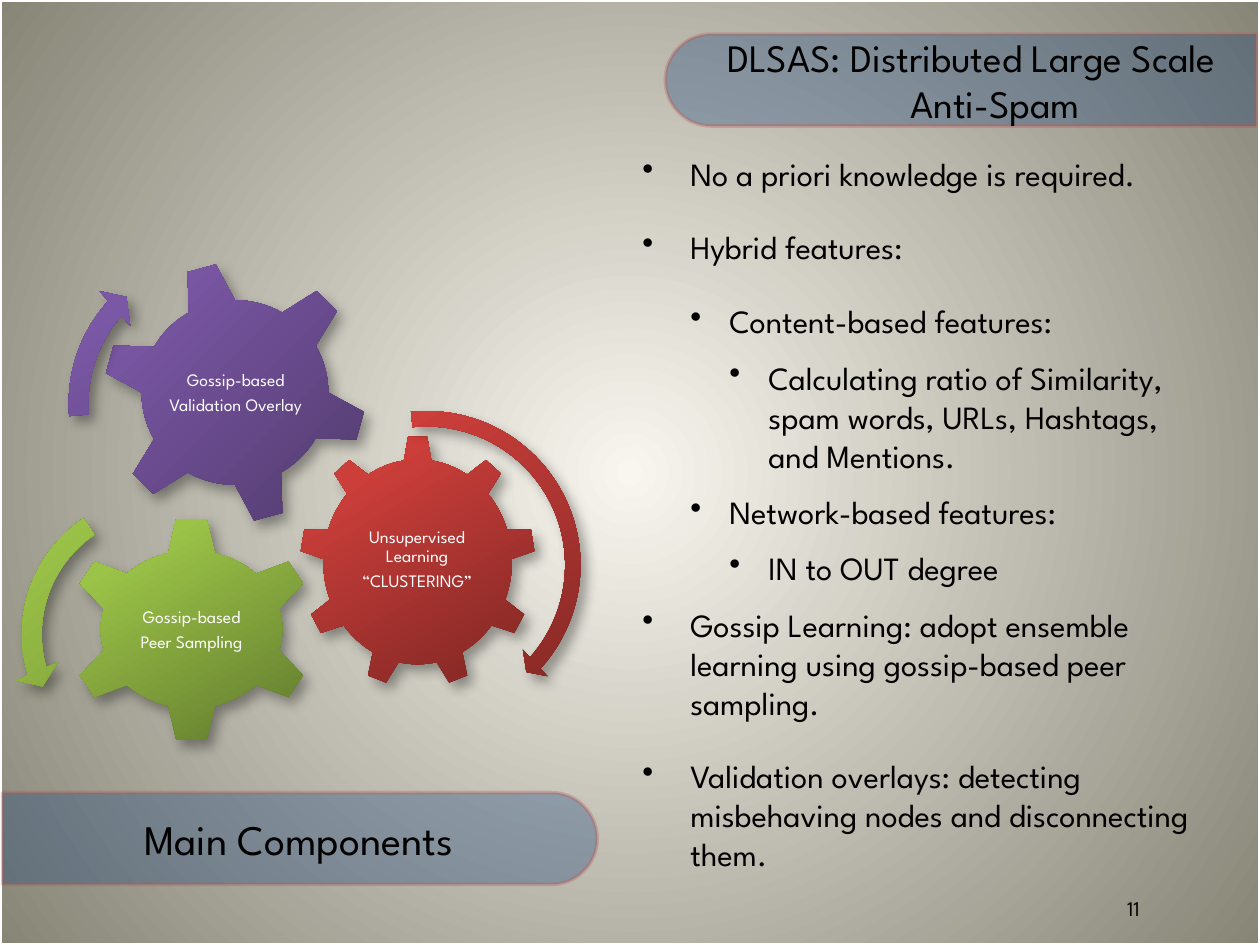
from dataclasses import dataclass
from typing import NamedTuple

from pptx import Presentation
from pptx.dml.color import RGBColor
from pptx.enum.shapes import MSO_SHAPE
from pptx.enum.text import MSO_ANCHOR, MSO_AUTO_SIZE, PP_ALIGN
from pptx.oxml import parse_xml
from pptx.oxml.ns import nsdecls, qn
from pptx.util import Emu, Inches, Pt

CENTER, LEFT = PP_ALIGN.CENTER, PP_ALIGN.LEFT
TOP, MIDDLE = MSO_ANCHOR.TOP, MSO_ANCHOR.MIDDLE
GEAR_6, GEAR_9 = MSO_SHAPE.GEAR_6, MSO_SHAPE.GEAR_9
ARROW, LEFT_ARROW = MSO_SHAPE.CIRCULAR_ARROW, MSO_SHAPE.LEFT_CIRCULAR_ARROW
BAND, RECTANGLE = MSO_SHAPE.ROUND_2_SAME_RECTANGLE, MSO_SHAPE.RECTANGLE
TITLE_ONLY = 5
COLUMNS, ROWS = 100, 75
SLIDE_WIDTH, SLIDE_HEIGHT = Inches(10), Inches(7.5)


@dataclass(frozen=True)
class Theme:
    font: str = "League Spartan"
    ink: str = "000000"
    light: str = "FFFFFF"
    band: str = "073779"
    band_line: str = "C0504D"
    band_opacity: int = 30
    background: tuple = ((0, "F8F6EE"), (100, "878576"))
    red: tuple = ((0, "7C2623"), (80, "CB3E3A"), (100, "CE3B37"))
    green: tuple = ((0, "5F772C"), (80, "9BC348"), (100, "9DC746"))
    purple: tuple = ((0, "4B3665"), (80, "7B58A6"), (100, "7C57A8"))
    title: float = 22.2
    caption: float = 24
    body: float = 18.5
    gear: float = 10
    number: float = 12


class Box(NamedTuple):
    """A place on the grid, in columns and rows."""
    left: float
    top: float
    width: float
    height: float

    def lengths(self) -> list[Emu]:
        column, row = SLIDE_WIDTH / COLUMNS, SLIDE_HEIGHT / ROWS
        return [Emu(round(share * unit)) for share, unit in zip(self, (column, row) * 2)]


class Wheel(NamedTuple):
    gear: MSO_SHAPE
    box: Box
    rotation: float
    label_box: Box
    label: tuple
    colors: tuple


class Turn(NamedTuple):
    arrow: MSO_SHAPE
    box: Box
    rotation: float
    adjustments: tuple
    colors: tuple


class Level(NamedTuple):
    margin: float
    hanging: float
    space_after: float


THEME = Theme()
LEVELS = (Level(0.38, 0.38, 20), Level(0.69, 0.31, 10), Level(1, 0.31, 10))
WHEELS = (
    Wheel(GEAR_9, Box(23.8, 34.6, 18.7, 20), 0, Box(27.5, 39.2, 11.2, 10.4),
          ("Unsupervised Learning", "“CLUSTERING”"), THEME.red),
    Wheel(GEAR_6, Box(5.3, 41, 19.8, 17.9), 0, Box(10.1, 45.6, 10.2, 8.8),
          ("Gossip-based", "Peer Sampling"), THEME.green),
    Wheel(GEAR_6, Box(8.1, 20.7, 21.1, 20.9), 345, Box(12.8, 25.3, 11.8, 11.8),
          ("Gossip-based", "Validation Overlay"), THEME.purple),
)
TURNS = (
    Turn(ARROW, Box(20.8, 31.8, 26.1, 26.1), 0,
         (0.047, 2.99, 25.197, 158.538, 0.055), THEME.red),
    Turn(LEFT_ARROW, Box(0.7, 38.2, 24.3, 24.3), 348.7,
         (0.065, 4.3, 104.891, 148.378, 0.075), THEME.green),
    Turn(ARROW, Box(4.4, 18.9, 26.2, 26.2), 0,
         (0.06, 3.941, 133.138, 105.082, 0.07), THEME.purple),
)
POINTS = (
    (0, "No a priori knowledge is required."),
    (0, "Hybrid features:"),
    (1, "Content-based features:"),
    (2, "Calculating ratio of Similarity, spam words, URLs, Hashtags, and Mentions."),
    (1, "Network-based features:"),
    (2, "IN to OUT degree"),
    (0, "Gossip Learning: adopt ensemble learning using gossip-based peer sampling."),
    (0, "Validation overlays: detecting misbehaving nodes and disconnecting them."),
)


def gradient_xml(stops: tuple, direction: str) -> str:
    marks = "".join(f'<a:gs pos="{position * 1000}"><a:srgbClr val="{color}"/></a:gs>'
                    for position, color in stops)
    return (f'<a:gradFill {nsdecls("a")} rotWithShape="1">'
            f'<a:gsLst>{marks}</a:gsLst>{direction}</a:gradFill>')


def set_background(slide) -> None:
    direction = ('<a:path path="circle">'
                 '<a:fillToRect l="50000" t="50000" r="50000" b="50000"/></a:path>')
    slide.element.cSld.insert(0, parse_xml(
        f'<p:bg {nsdecls("p", "a")}><p:bgPr>{gradient_xml(THEME.background, direction)}'
        '<a:effectLst/></p:bgPr></p:bg>'))


def add_shape(slide, kind: MSO_SHAPE, box: Box, rotation: float = 0, adjustments: tuple = ()):
    shape = slide.shapes.add_shape(kind, *box.lengths())
    shape.shadow.inherit = False
    shape.rotation = rotation
    for index, value in enumerate(adjustments):
        shape.adjustments[index] = value
    return shape


def set_line(shape, color: str) -> None:
    shape.line.color.rgb = RGBColor.from_string(color)
    shape.line.width = Pt(2)


def add_band(slide, box: Box, rotation: float) -> None:
    """Draw a band lying on its side, rounded at its inner end."""
    shift = (box.width - box.height) / 2
    upright = Box(box.left + shift, box.top - shift, box.height, box.width)
    shape = add_shape(slide, BAND, upright, rotation, (0.5, 0))
    shape.fill.solid()
    shape.fill.fore_color.rgb = RGBColor.from_string(THEME.band)
    set_line(shape, THEME.band_line)
    for color in shape.element.spPr.iter(qn("a:srgbClr")):
        color.append(parse_xml(
            f'<a:alpha {nsdecls("a")} val="{THEME.band_opacity * 1000}"/>'))


def add_part(slide, kind: MSO_SHAPE, box: Box, rotation: float, colors: tuple,
             adjustments: tuple = ()) -> None:
    """Draw a gear or a curved arrow with a gradient and a soft shadow."""
    shape = add_shape(slide, kind, box, rotation, adjustments)
    shape.line.fill.background()
    properties = shape.element.spPr
    direction = f'<a:lin ang="{240 * 60000}" scaled="0"/>'
    properties.find(qn("a:prstGeom")).addnext(parse_xml(gradient_xml(colors, direction)))
    properties.find(qn("a:effectLst")).append(parse_xml(
        f'<a:outerShdw {nsdecls("a")} blurRad="{Pt(7)}" dist="{Pt(5)}" dir="{50 * 60000}" '
        'rotWithShape="0"><a:srgbClr val="000000"><a:alpha val="35000"/></a:srgbClr>'
        '</a:outerShdw>'))


def add_text(slide, box: Box, lines: tuple, *, size: float, color: str = THEME.ink,
             align: PP_ALIGN = CENTER, anchor: MSO_ANCHOR = MIDDLE, inset: float = 0.1,
             spacing: float = 1, space_after: float = 0, indented: bool = False,
             bullet: str = "", shape=None) -> None:
    """Write (level, text) lines in a new text box or in the given placeholder."""
    shape = shape or slide.shapes.add_textbox(0, 0, 0, 0)
    shape.left, shape.top, shape.width, shape.height = box.lengths()
    frame = shape.text_frame
    frame.word_wrap, frame.auto_size, frame.vertical_anchor = True, MSO_AUTO_SIZE.NONE, anchor
    frame.margin_left = frame.margin_right = Inches(inset)
    frame.margin_top = frame.margin_bottom = Inches(min(inset, 0.05))
    for index, (depth, text) in enumerate(lines):
        paragraph = frame.add_paragraph() if index else frame.paragraphs[0]
        level = LEVELS[depth]
        paragraph.level = depth
        properties = paragraph._p.get_or_add_pPr()
        if indented:
            properties.set("marL", str(Inches(level.margin)))
            properties.set("indent", str(-Inches(level.hanging)))
        if bullet:
            properties.append(parse_xml(f'<a:buChar {nsdecls("a")} char="{bullet}"/>'))
        paragraph.alignment, paragraph.line_spacing = align, spacing
        paragraph.space_after = Pt(level.space_after if indented else space_after)
        run = paragraph.add_run()
        run.text = text
        run.font.name, run.font.size = THEME.font, Pt(size)
        run.font.color.rgb = RGBColor.from_string(color)


def main() -> None:
    presentation = Presentation()
    presentation.slide_width, presentation.slide_height = SLIDE_WIDTH, SLIDE_HEIGHT
    slide = presentation.slides.add_slide(presentation.slide_layouts[TITLE_ONLY])

    # Background, frame and bands
    set_background(slide)
    frame = add_shape(slide, RECTANGLE, Box(0, 0, COLUMNS, ROWS))
    frame.fill.background()
    set_line(frame, THEME.light)
    add_band(slide, Box(0.2, 62.9, 47.2, 7.3), 90)
    add_band(slide, Box(52.8, 2.7, 46.9, 7.3), 270)

    # Gears and their arrows
    for wheel in WHEELS:
        add_part(slide, wheel.gear, wheel.box, wheel.rotation, wheel.colors)
        add_text(slide, wheel.label_box, tuple((0, line) for line in wheel.label),
                 size=THEME.gear, color=THEME.light, inset=0.01, spacing=0.9, space_after=3.5)
    for turn in TURNS:
        add_part(slide, turn.arrow, turn.box, turn.rotation, turn.colors, turn.adjustments)

    # Title in front of its band, caption, points and slide number
    title = slide.shapes.title
    slide.shapes.element.append(title.element)
    add_text(slide, Box(56.7, 2.7, 40.8, 7.3), ((0, "DLSAS: Distributed Large Scale Anti-Spam"),),
             size=THEME.title, indented=True, shape=title)
    add_text(slide, Box(3.3, 62.9, 40.8, 7.3), ((0, "Main Components"),),
             size=THEME.caption, indented=True)
    add_text(slide, Box(50, 11.7, 47.5, 57.5), POINTS, size=THEME.body, align=LEFT,
             anchor=TOP, indented=True, bullet="•")
    add_text(slide, Box(81.7, 70, 16.5, 4.2), ((0, "11"),), size=THEME.number)

    presentation.save("out.pptx")


if __name__ == "__main__":
    main()
